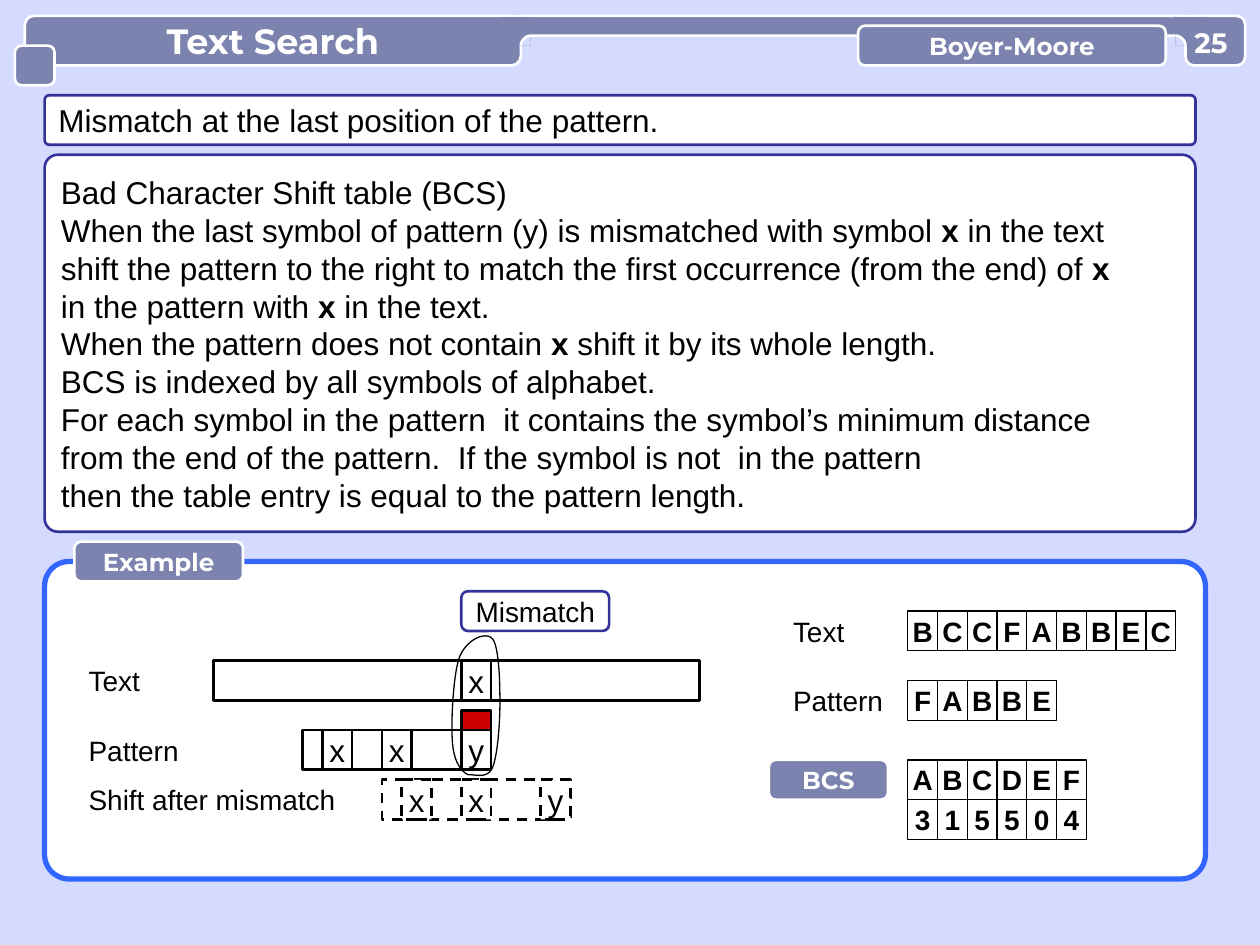
import pptx
import pptx.util
import pptx.dml.color
import pptx.enum.dml
import pptx.enum.shapes
import pptx.enum.text

# Grid of 2 mm squares: 127 columns across the slide
UNIT = 72000
CELL = 3
ROW = 4
SHAPE = pptx.enum.shapes.MSO_SHAPE
ALIGN = pptx.enum.text.PP_ALIGN
DASH = pptx.enum.dml.MSO_LINE.DASH
BACKGROUND, SLATE, WHITE, BLACK = "D5DAFF", "7D83AF", "FFFFFF", "000000"
NAVY, BLUE, RED = "333399", "3366FF", "CC0000"

BODY_LINES = [
    "Bad Character Shift table (BCS)",
    "When the last symbol of pattern (y) is mismatched with symbol *x* in the text",
    "shift the pattern to the right to match the first occurrence (from the end) of *x*",
    "in the pattern with *x* in the text.",
    "When the pattern does not contain *x* shift it by its whole length.",
    "BCS is indexed by all symbols of alphabet.",
    "For each symbol in the pattern  it contains the symbol’s minimum distance",
    "from the end of the pattern.  If the symbol is not  in the pattern",
    "then the table entry is equal to the pattern length.",
]


def grid(*counts):
    return [pptx.util.Emu(round(count * UNIT)) for count in counts]


def color(value):
    return pptx.dml.color.RGBColor.from_string(value)


def paint(shape, fill, line, width=1.5, dash=None):
    shape.shadow.inherit = False
    if fill:
        shape.fill.solid()
        shape.fill.fore_color.rgb = color(fill)
    else:
        shape.fill.background()
    if line:
        shape.line.color.rgb = color(line)
        shape.line.width = pptx.util.Pt(width)
        if dash:
            shape.line.dash_style = dash
    else:
        shape.line.fill.background()


def write(shape, lines, size, font="Arial", ink=BLACK, bold=False,
          align=ALIGN.LEFT, leading=None):
    """Write one paragraph per line; text between asterisks is bold."""
    frame = shape.text_frame
    frame.word_wrap = False
    frame.auto_size = pptx.enum.text.MSO_AUTO_SIZE.NONE
    frame.vertical_anchor = pptx.enum.text.MSO_ANCHOR.MIDDLE
    for number, line in enumerate(lines):
        para = frame.add_paragraph() if number else frame.paragraphs[0]
        para.alignment = align
        para.font.name, para.font.size = font, pptx.util.Pt(size)
        para.font.bold, para.font.color.rgb = bold, color(ink)
        if leading:
            para.line_spacing = pptx.util.Pt(leading)
        for part, words in enumerate(line.split("*")):
            if words:
                span = para.add_run()
                span.text = words
                if part % 2:
                    span.font.bold = True


def add_rect(page, place, fill=None, line=BLACK, width=1.5, dash=None):
    box = page.shapes.add_shape(SHAPE.RECTANGLE, *grid(*place))
    paint(box, fill, line, width, dash)
    return box


def add_panel(page, place, corner, fill=WHITE, line=NAVY, width=1.5):
    box = page.shapes.add_shape(SHAPE.ROUNDED_RECTANGLE, *grid(*place))
    box.adjustments[0] = corner
    paint(box, fill, line, width)
    return box


def add_tag(page, place, text):
    box = add_panel(page, place, 0.17, SLATE, WHITE)
    write(box, [text], 14, "Montserrat", WHITE, True, ALIGN.CENTER)


def add_label(page, left, top, width, text, line=None):
    write(add_panel(page, (left, top, width, ROW), 0.163, line=line), [text], 16)


def add_symbol(page, left, top, symbol, fill=WHITE, dash=None):
    box = add_rect(page, (left, top, CELL, ROW), fill, dash=dash)
    write(box, [symbol], 18, align=ALIGN.CENTER)


def add_letters(page, left, top, letters):
    for column, letter in enumerate(letters):
        box = add_rect(page, (left + column * CELL, top, CELL, ROW), width=0.75)
        write(box, [letter], 16, bold=True, align=ALIGN.CENTER)


def curve(start, *segments, steps=12):
    """Points along a chain of cubic curves given as three points each."""
    points = [start]
    for first, second, end in segments:
        begin = points[-1]
        for step in range(1, steps + 1):
            t = step / steps
            weights = ((1 - t) ** 3, 3 * t * (1 - t) ** 2, 3 * t * t * (1 - t), t ** 3)
            points.append(tuple(
                sum(weight * point[axis] for weight, point
                    in zip(weights, (begin, first, second, end)))
                for axis in (0, 1)))
    return points


def add_outline(page, points, fill, line, width=1.5, close=True):
    corners = [tuple(grid(*point)) for point in points]
    builder = page.shapes.build_freeform(*corners[0])
    builder.add_line_segments(corners[1:], close=close)
    paint(builder.convert_to_shape(), fill, line, width)


def add_joint(page, left, inner, outer):
    """Fill the seam between header parts and round the corner under it."""
    top = 1.6
    add_rect(page, (left, top, 3, 3), SLATE, None)
    edge = page.shapes.add_connector(
        pptx.enum.shapes.MSO_CONNECTOR.STRAIGHT, *grid(left, top, left + 3, top))
    edge.line.color.rgb = color(WHITE)
    edge.line.width = pptx.util.Pt(1.5)
    properties = edge._element.spPr
    properties.append(properties.makeelement(
        "{http://schemas.openxmlformats.org/drawingml/2006/main}effectLst", {}))
    middle = (inner + outer) / 2
    arc = curve((inner, 3.6), ((middle, 3.6), (outer, 4.1), (outer, 4.6)))
    add_outline(page, arc + [(inner, 4.6)], BACKGROUND, None)
    add_outline(page, arc, None, WHITE, close=False)


def add_header(page):
    add_panel(page, (2.5, 1.6, 50, 5), 0.188, SLATE, WHITE)
    add_panel(page, (51.5, 1.6, 69, 2), 0.5, SLATE, WHITE)
    add_joint(page, 50.5, 53.5, 52.5)
    add_panel(page, (1.5, 4.6, 4, 4), 0.17, SLATE, WHITE)
    add_panel(page, (119.5, 1.6, 6, 5), 0.17, SLATE, WHITE)
    add_joint(page, 118.5, 118.5, 119.5)
    add_tag(page, (86.5, 2.6, 31, 4), "Boyer-Moore")

    title = page.shapes.title
    title.left, title.top, title.width, title.height = grid(2.5, 1.6, 50, 5)
    write(title, ["Text Search"], 20, "Montserrat", WHITE, True, ALIGN.CENTER)
    page.shapes._spTree.append(title._element)  # bring above its panel

    number = page.shapes.add_textbox(*grid(119.5, 2.6, 5.1, 3.4))
    frame = number.text_frame
    frame.margin_left = frame.margin_right = frame.margin_top = frame.margin_bottom = 0
    write(number, ["25"], 16, "Montserrat", WHITE, True, ALIGN.CENTER)


def add_mismatch_diagram(page):
    text_row, pattern_row, shift_row = 66.6, 73.6, 78.6
    hit = 46.5  # column of the mismatch
    for top, width, text in ((text_row, 8, "Text"), (pattern_row, 15, "Pattern"),
                             (shift_row, 24, "Shift after mismatch")):
        add_label(page, 7.5, top, width, text)
    add_label(page, hit, 59.6, 14.9, "Mismatch", NAVY)

    add_rect(page, (21.5, text_row, 49, ROW), WHITE)
    add_symbol(page, hit, text_row, "x")
    # The pattern before and after its shift by eight columns
    for left, top, dash in ((30.5, pattern_row, None), (38.5, shift_row, DASH)):
        add_rect(page, (left, top, 19, ROW), WHITE, dash=dash)
        for offset, symbol in ((2, "x"), (8, "x"), (16, "y")):
            fill = WHITE if symbol == "x" or dash else None
            add_symbol(page, left + offset, top, symbol, fill, dash)
    add_rect(page, (hit, pattern_row - 2, CELL, 2), RED)

    # Loop around the mismatched pair
    loop = curve((47.25, 78.1),
                 ((46.5, 77.85), (45.7, 76.7), (45.6, 74.7)),
                 ((45.45, 72.65), (45.7, 67.8), (46.35, 66.15)),
                 ((47.1, 64.4), (49, 63.6), (49.65, 64.4)),
                 ((50.3, 65.15), (50.4, 68.7), (50.4, 70.85)),
                 ((50.4, 73), (50.15, 76.2), (49.65, 77.35)),
                 ((49.15, 78.6), (47.75, 78), (47.25, 78.1)))
    add_outline(page, loop, None, BLACK, 0.75)


def add_shift_example(page):
    add_label(page, 78.5, 61.6, 8, "Text")
    add_label(page, 78.5, 68.6, 10, "Pattern")
    add_tag(page, (77.5, 76.6, 12, ROW), "BCS")
    for top, letters in ((61.6, "BCCFABBEC"), (68.6, "FABBE"),
                         (76.6, "ABCDEF"), (80.6, "315504")):
        add_letters(page, 91.5, top, letters)


def main():
    deck = pptx.Presentation()
    deck.slide_width, deck.slide_height = pptx.util.Inches(10), pptx.util.Inches(7.5)
    page = deck.slides.add_slide(deck.slide_layouts[5])
    page.background.fill.solid()
    page.background.fill.fore_color.rgb = color(BACKGROUND)

    # Statement and explanation
    write(add_panel(page, (4.5, 9.6, 116, 5), 0.095),
          ["Mismatch at the last position of the pattern."], 18)
    write(add_panel(page, (4.5, 15.6, 116, 38), 0.035), BODY_LINES, 18, leading=21.6)

    # Example
    add_panel(page, (4.5, 56.6, 117, 32), 0.077, line=BLUE, width=3)
    add_tag(page, (7.5, 54.6, 17, ROW), "Example")
    add_mismatch_diagram(page)
    add_shift_example(page)

    add_header(page)
    deck.save("out.pptx")


if __name__ == "__main__":
    main()
